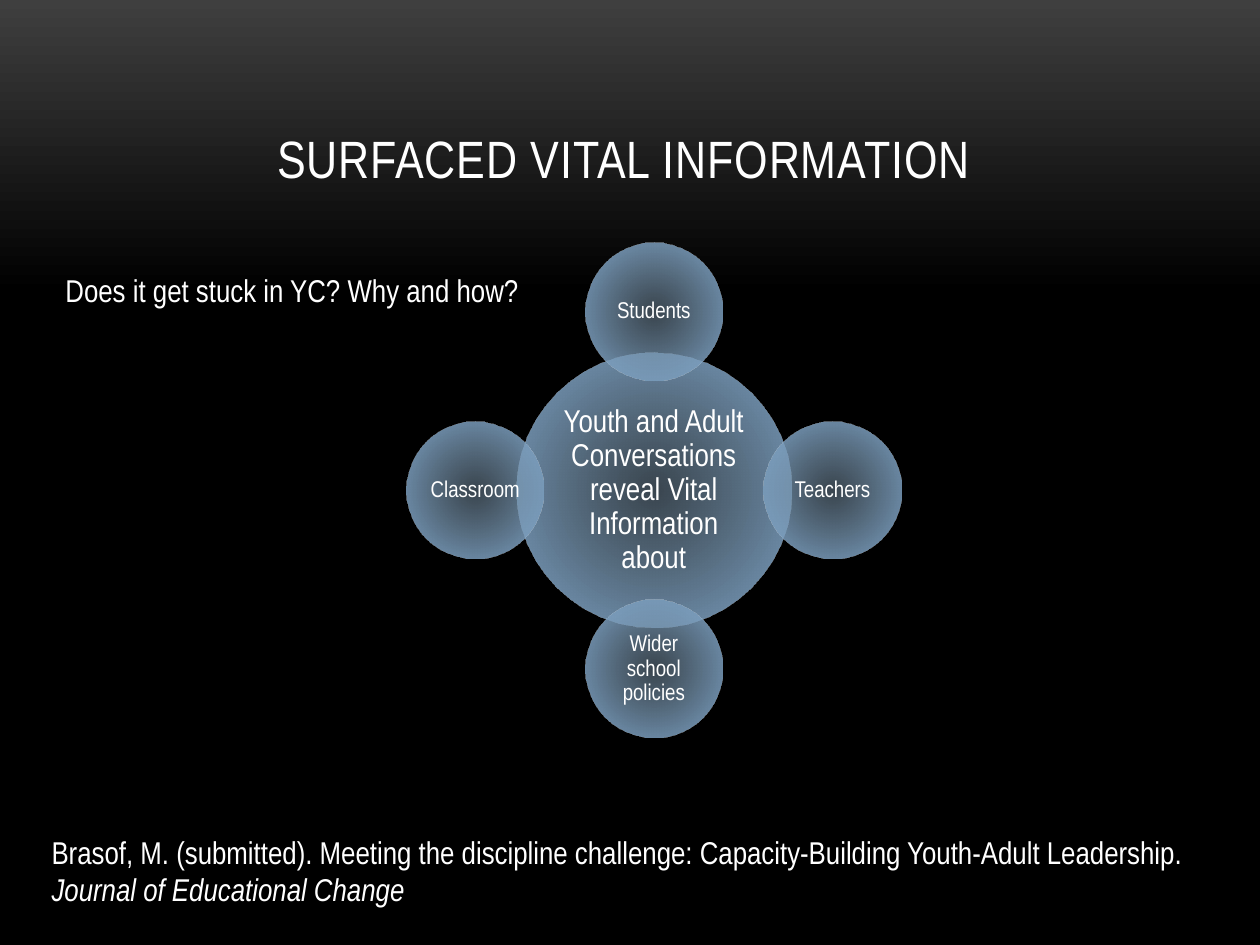
from math import cos, radians, sin

from lxml import etree
from pptx import Presentation
from pptx.dml.color import RGBColor
from pptx.enum.shapes import MSO_SHAPE as Shape
from pptx.enum.text import MSO_ANCHOR as Anchor, PP_ALIGN as Align
from pptx.oxml.ns import qn
from pptx.util import Cm, Pt

# Theme: each gradient stop is (position %, colour, opacity %)
THEME = {
    "font": "Arial Narrow",
    "text": RGBColor.from_string("FFFFFF"),
    "title": Pt(30),
    "body": Pt(18),
    "label": Pt(13),
    "background": [(0, "3F3F3F", 100), (31, "000000", 100), (100, "000000", 100)],
    "circle": [(0, "758DA1", 50), (100, "7FA6CA", 100)],
}


def set_gradient(owner, fill, stops, radial=False):
    """Fill with the given stops, from top to bottom or from the centre out."""
    fill.gradient()
    gradient = owner.find(f".//{qn('a:gradFill')}")
    for child in list(gradient):
        gradient.remove(child)
    stop_list = etree.SubElement(gradient, qn("a:gsLst"))
    for position, color, opacity in stops:
        stop = etree.SubElement(stop_list, qn("a:gs"), pos=str(position * 1000))
        rgb = etree.SubElement(stop, qn("a:srgbClr"), val=color)
        if opacity < 100:
            etree.SubElement(rgb, qn("a:alpha"), val=str(opacity * 1000))
    if radial:
        shade = etree.SubElement(gradient, qn("a:path"), path="circle")
        edges = dict.fromkeys("ltrb", "100000")
        etree.SubElement(shade, qn("a:fillToRect"), **edges)
    else:
        etree.SubElement(gradient, qn("a:lin"), ang="5400000", scaled="0")


def write_text(shape, lines, size, frame_format, paragraph_format):
    """Write (text, italic) lines, one paragraph each."""
    frame = shape.text_frame
    for name, value in frame_format.items():
        setattr(frame, name, value)
    for index, (text, italic) in enumerate(lines):
        paragraph = frame.add_paragraph() if index else frame.paragraphs[0]
        for name, value in paragraph_format.items():
            setattr(paragraph, name, value)
        run = paragraph.add_run()
        run.text = text
        run_format = {"name": THEME["font"], "size": size, "italic": italic}
        for name, value in run_format.items():
            setattr(run.font, name, value)
        run.font.color.rgb = THEME["text"]


presentation = Presentation()
presentation.slide_width, presentation.slide_height = Cm(25.4), Cm(19.05)
slide = presentation.slides.add_slide(presentation.slide_layouts[6])
set_gradient(slide.element, slide.background.fill, THEME["background"])

# Radial diagram: a hub and four circles around it, clockwise from the top
CENTER_X, CENTER_Y = 13.18, 9.88
HUB, SATELLITE, ORBIT = 5.54, 2.77, 3.6
circles = [("Youth and Adult Conversations reveal Vital Information about",
            CENTER_X, CENTER_Y, HUB, THEME["body"], 0.08)]
labels = ["Students", "Teachers", "Wider school policies", "Classroom"]
for index, label in enumerate(labels):
    angle = radians(index * 360 / len(labels) - 90)
    circles.append((label, CENTER_X + ORBIT * cos(angle), CENTER_Y + ORBIT * sin(angle),
                    SATELLITE, THEME["label"], 0.05))

for label, x, y, diameter, size, margin in circles:
    circle = slide.shapes.add_shape(Shape.OVAL, Cm(x - diameter / 2), Cm(y - diameter / 2),
                                    Cm(diameter), Cm(diameter))
    circle.shadow.inherit = False
    circle.line.fill.background()
    set_gradient(circle.element, circle.fill, THEME["circle"], radial=True)
    margins = {f"margin_{side}": Cm(margin) for side in ("left", "top", "right", "bottom")}
    write_text(circle, [(label, False)], size,
               {"word_wrap": True, "vertical_anchor": Anchor.MIDDLE, **margins},
               {"alignment": Align.CENTER, "line_spacing": 0.9})

# Citation, title and question
citation = [
    ("Brasof, M. (submitted). Meeting the discipline challenge: "
     "Capacity-Building Youth-Adult Leadership.", False),
    ("Journal of Educational Change", True),
]
title = [("SURFACED VITAL INFORMATION ", False)]
question = [("Does it get stuck in YC? Why and how?", False)]
unwrapped = {"word_wrap": False}
bottom = {"word_wrap": True, "vertical_anchor": Anchor.BOTTOM}
left, centered = {"alignment": Align.LEFT}, {"alignment": Align.CENTER}
text_boxes = [
    (citation, (0.79, 16.66, 23.55, 1.8), THEME["body"], unwrapped, left),
    (title, (1.7, 0.76, 22.02, 3.18), THEME["title"], bottom, centered),
    (question, (1.07, 5.33, 9.73, 1.02), THEME["body"], unwrapped, left),
]
for lines, place, size, frame_format, paragraph_format in text_boxes:
    box = slide.shapes.add_textbox(*map(Cm, place))
    write_text(box, lines, size, frame_format, paragraph_format)
    if lines is title:
        # Letter spacing of half a point
        box.text_frame.paragraphs[0].runs[0].font._element.set("spc", "50")

presentation.save("out.pptx")
